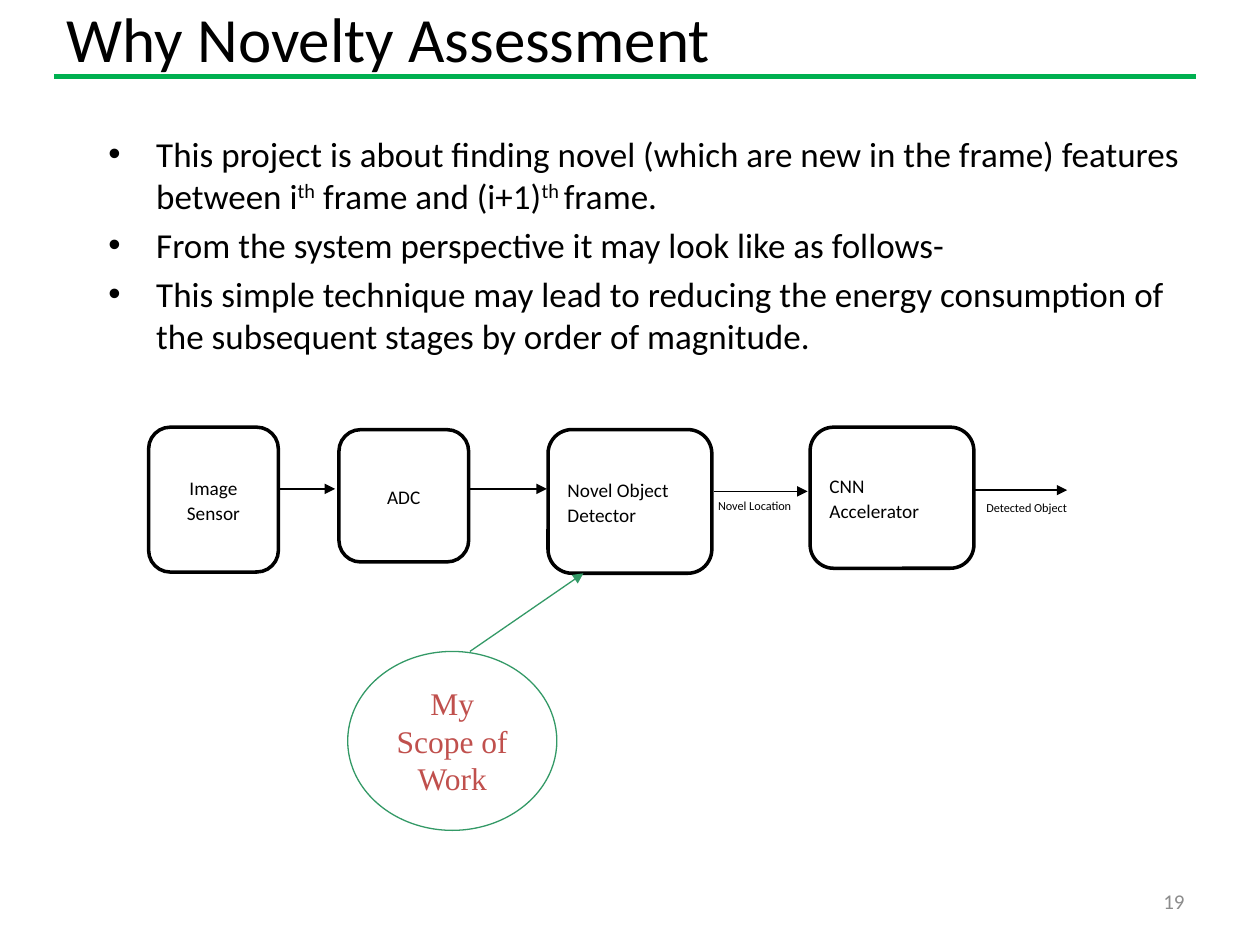
"""Build the novelty assessment slide on a grid of 100 columns by 75 rows."""
import pptx
import pptx.dml.color
import pptx.enum.shapes
import pptx.enum.text
import pptx.oxml.ns
import pptx.util
from lxml import etree

BLACK, GREEN, LEAF, RED, GREY = "000000", "00B050", "339966", "C0504D", "8C8C8C"
ALIGN = pptx.enum.text.PP_ALIGN
ANCHOR = pptx.enum.text.MSO_ANCHOR
SHAPE = pptx.enum.shapes.MSO_SHAPE

POINTS = [
    "This project is about finding novel (which are new in the frame) features "
    "between i^th^ frame and (i+1)^th ^frame.",
    "From the system perspective it may look like as follows-",
    "This simple technique may lead to reducing the energy consumption of "
    "the subsequent stages by order of magnitude.",
]
STAGES = [
    ("Image Sensor", (11.8, 33.9, 10.3, 11.5), ALIGN.CENTER),
    ("ADC", (26.9, 34.1, 10.3, 10.5), ALIGN.CENTER),
    ("Novel Object Detector", (43.5, 34.1, 13, 11.4), ALIGN.LEFT),
    ("CNN Accelerator", (64.3, 33.9, 13, 11.2), ALIGN.LEFT),
]
FLOWS = [(22.1, 26.6, 38.8), (37.3, 43.4, 38.8), (56.7, 64.1, 39), (77.4, 84.7, 38.9)]
LABELS = [("Novel Location", 56, 39), ("Detected Object", 77.3, 39.1)]


def grid(*cells):
    """Turn grid cells into slide lengths."""
    return [pptx.util.Inches(cell / 10) for cell in cells]


def paint(item, color):
    """Give a fill or font colour format a solid hex colour."""
    item.rgb = pptx.dml.color.RGBColor.from_string(color)


def write(frame, text, size, font="Calibri", color=BLACK, align=ALIGN.LEFT,
          anchor=ANCHOR.TOP, lead=None, after=None):
    """Write lines into a frame, raising whatever stands between carets."""
    frame.word_wrap = True
    frame.auto_size = pptx.enum.text.MSO_AUTO_SIZE.NONE
    frame.vertical_anchor = anchor
    for row, line in enumerate(text.split("\n")):
        para = frame.add_paragraph() if row else frame.paragraphs[0]
        para.alignment = align
        if lead:
            para.line_spacing = lead
        if after:
            para.space_after = pptx.util.Pt(after)
        for part, words in enumerate(line.split("^")):
            run = para.add_run()
            run.text = words
            run.font.name = font
            run.font.size = pptx.util.Pt(size)
            paint(run.font.color, color)
            if part % 2:
                run.font._element.set("baseline", "30000")


def fill(holder, cells, text, size, **style):
    """Move a placeholder and write its text."""
    holder.left, holder.top, holder.width, holder.height = grid(*cells)
    write(holder.text_frame, text, size, **style)


def indent(frame, cells):
    """Hang the bullets of a frame by some grid cells."""
    width = grid(cells)[0]
    for para in frame.paragraphs:
        props = para._p.get_or_add_pPr()
        props.set("marL", str(width))
        props.set("indent", str(-width))


def label(slide, cells, text, size, **style):
    """Add a text box."""
    write(slide.shapes.add_textbox(*grid(*cells)).text_frame, text, size, **style)


def node(slide, kind, cells, edge, width, text, size, **style):
    """Add an outlined shape with text."""
    shape = slide.shapes.add_shape(kind, *grid(*cells))
    shape.shadow.inherit = False
    shape.fill.background()
    paint(shape.line.color, edge)
    shape.line.width = pptx.util.Pt(width)
    write(shape.text_frame, text, size, **style)


def link(slide, ends, color=BLACK, width=0.75, head=True):
    """Add a straight line, with an arrowhead at its end if asked."""
    kind = pptx.enum.shapes.MSO_CONNECTOR.STRAIGHT
    line = slide.shapes.add_connector(kind, *grid(*ends))
    paint(line.line.color, color)
    line.line.width = pptx.util.Pt(width)
    name = pptx.oxml.ns.qn
    if head:
        edge = line._element.spPr.find(name("a:ln"))
        etree.SubElement(edge, name("a:tailEnd"), type="triangle")
    etree.SubElement(line._element.spPr, name("a:effectLst"))


def main():
    """Build and save the slide."""
    deck = pptx.Presentation()
    deck.slide_width, deck.slide_height = grid(100, 75)
    slide = deck.slides.add_slide(deck.slide_layouts[1])
    title, body = slide.placeholders

    link(slide, (4.3, 6.1, 94.9, 6.1), GREEN, 3, head=False)
    fill(title, (4.3, 0.5, 90, 4.9), "Why Novelty Assessment", 36, anchor=ANCHOR.MIDDLE)
    fill(body, (7.6, 10, 87.4, 41.2), "\n".join(POINTS), 20)
    indent(body.text_frame, 3.8)
    label(slide, (71.7, 69.5, 23.3, 4), "19", 12, color=GREY,
          align=ALIGN.RIGHT, anchor=ANCHOR.MIDDLE)

    loose = {"lead": 1.07, "after": 8}
    for text, cells, align in STAGES:
        node(slide, SHAPE.ROUNDED_RECTANGLE, cells, BLACK, 2, text, 11,
             align=align, anchor=ANCHOR.MIDDLE, **loose)
    for start, end, row in FLOWS:
        link(slide, (start, row, end, row))
    for text, col, row in LABELS:
        label(slide, (col, row, 9.5, 6.5), text, 7, **loose)

    node(slide, SHAPE.OVAL, (27.6, 51.7, 16.6, 14.2), LEAF, 0.75, "My Scope of Work",
         18, font="Times New Roman", color=RED, align=ALIGN.CENTER)
    link(slide, (37.3, 51.7, 46.3, 45.5), LEAF)
    deck.save("out.pptx")


if __name__ == "__main__":
    main()
